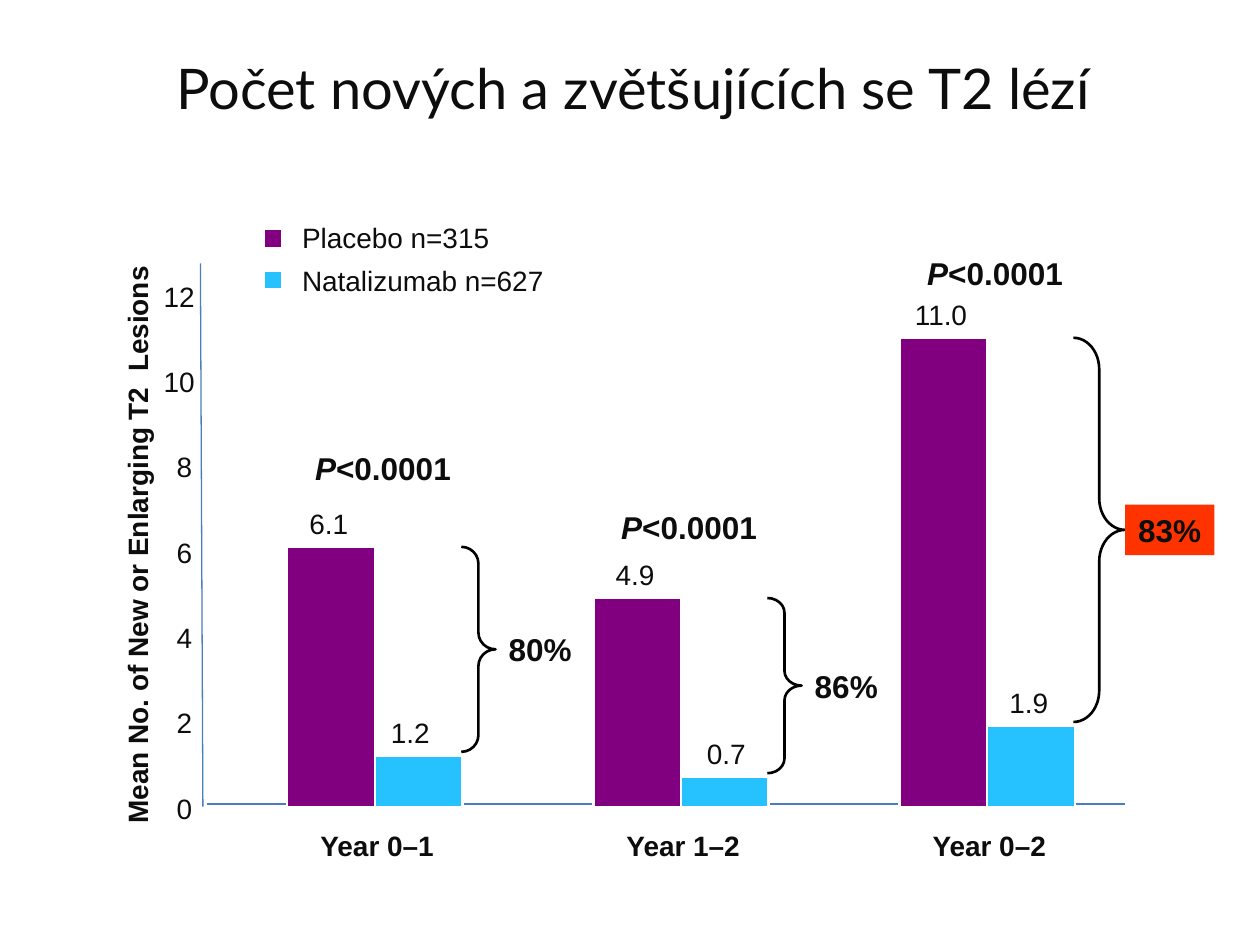
import pptx
import pptx.dml.color
import pptx.enum.shapes
import pptx.enum.text
import pptx.oxml.ns
import pptx.util
from lxml import etree

Cm = pptx.util.Cm
Pt = pptx.util.Pt
Align = pptx.enum.text.PP_ALIGN
Kind = pptx.enum.shapes.MSO_SHAPE

HUES = {"ink": "0D0D0D", "placebo": "800080", "drug": "26C2FF", "axis": "4B7EBC",
        "alert": "FF3300", "brace": "000000", "white": "FFFFFF"}

TITLE = "Počet nových a zvětšujících se T2 lézí"
SCALE = "Mean No. of New or Enlarging T2  Lesions"
TICKS = [0, 2, 4, 6, 8, 10, 12]
# name, hue, key top, label top
KEYS = [("Placebo n=315", "placebo", 4.62, 4.32),
        ("Natalizumab n=627", "drug", 5.46, 5.18)]
# name, placebo, drug, drug label shift, drop, brace width, brace curve, P top, drop fill
GROUPS = [
    ("Year 0–1", 6.1, 1.2, -0.33, "80%", 0.69, 0.49, 8.92, None),
    ("Year 1–2", 4.9, 0.7, -0.13, "86%", 0.69, 0.43, 10.11, None),
    ("Year 0–2", 11.0, 1.9, -0.2, "83%", 1.04, 0.61, 5.0, "alert"),
]
PVALUE = ("P", "<0.0001")

BASE, UNIT = 16.27, 0.86      # zero line and height of one lesion
LEFT, STEP, BAR = 5.79, 6.17, 1.77

deck = pptx.Presentation()
deck.slide_width, deck.slide_height = Cm(25.4), Cm(19.05)
slide = deck.slides.add_slide(deck.slide_layouts[6])
shapes = slide.shapes


def tint(name):
    return pptx.dml.color.RGBColor.from_string(HUES[name])


def write(frame, text, size=16, bold=False, align=Align.CENTER, wrap=False, bare=False,
          font="Arial"):
    """Fill a text frame; bare means without margins."""
    frame.text = text
    frame.word_wrap = wrap
    frame.auto_size = pptx.enum.text.MSO_AUTO_SIZE.SHAPE_TO_FIT_TEXT
    if bare:
        frame.margin_left = frame.margin_right = 0
        frame.margin_top = frame.margin_bottom = 0
    para = frame.paragraphs[0]
    para.alignment = align
    style(para.runs[0], size, bold, font)
    return para


def style(run, size, bold, font="Arial"):
    run.font.size, run.font.bold, run.font.name = Pt(size), bold, font
    run.font.color.rgb = tint("ink")


def label(x, y, w, h, text, **look):
    box = shapes.add_textbox(Cm(x), Cm(y), Cm(w), Cm(h))
    write(box.text_frame, text, **look)
    return box


def form(kind, x, y, w, h, fill=None, line=None):
    item = shapes.add_shape(kind, Cm(x), Cm(y), Cm(w), Cm(h))
    item.shadow.inherit = False
    if fill:
        item.fill.solid()
        item.fill.fore_color.rgb = tint(fill)
    else:
        item.fill.background()
    if line:
        item.line.color.rgb = tint(line)
        item.line.width = Pt(1.5)
    else:
        item.line.fill.background()
    return item


def axis(x1, y1, x2, y2):
    line = shapes.add_connector(pptx.enum.shapes.MSO_CONNECTOR.STRAIGHT,
                                Cm(x1), Cm(y1), Cm(x2), Cm(y2))
    line.line.color.rgb = tint("axis")
    line.line.width = Pt(0.75)
    etree.SubElement(line._element.spPr, pptx.oxml.ns.qn("a:effectLst"))


def bar(x, value, hue, shift):
    """Draw one bar with its value and return its top."""
    top = BASE - value * UNIT
    form(Kind.RECTANGLE, x, top, BAR, value * UNIT, hue, "white")
    label(x + shift, top - 0.94, 2.08, 0.94, f"{value:.1f}", wrap=True)
    return top


def group(x, name, placebo, drug, shift, drop, wide, curve, ptop, fill):
    high = bar(x, placebo, "placebo", -0.2)
    low = bar(x + BAR, drug, "drug", shift) - 0.08

    brace = form(Kind.RIGHT_BRACE, x + 3.51, high, wide, low - high, line="brace")
    brace.adjustments[0] = curve
    tag = form(Kind.RECTANGLE, x + 3.51 + wide, (high + low) / 2 - 0.51, 1.8, 1.02, fill)
    write(tag.text_frame, drop, size=18, bold=True)

    note = label(x + 0.28, ptop, 3.3, 1.02, PVALUE[0], size=18, bold=True)
    para = note.text_frame.paragraphs[0]
    para.runs[0].font.italic = True
    rest = para.add_run()
    rest.text = PVALUE[1]
    style(rest, 18, True)

    label(x + 0.67, 16.71, 2.36, 0.69, name, bold=True, align=Align.LEFT, bare=True)


title = label(1.02, 0.23, 23.5, 3.07, TITLE, size=32, wrap=True, font="Lato")
title.text_frame.auto_size = pptx.enum.text.MSO_AUTO_SIZE.NONE
title.text_frame.vertical_anchor = pptx.enum.text.MSO_ANCHOR.MIDDLE

label(-2.92, 10.64, 11.38, 0.69, SCALE, bold=True, bare=True).rotation = 270
for tick in TICKS:
    x, wide = (3.56, 0.31) if tick < 10 else (3.3, 0.63)
    label(x, 15.95 - tick * UNIT, wide, 0.69, str(tick), align=Align.LEFT, bare=True)

axis(4.17, 16.21, 22.68, 16.21)
for i, data in enumerate(GROUPS):
    group(LEFT + i * STEP, *data)
axis(4.04, 5.31, 4.09, 16.26)

for name, hue, top, text_top in KEYS:
    form(Kind.RECTANGLE, 5.31, top, 0.38, 0.38, hue, "white")
    label(5.84, text_top, 8.59, 0.94, name, align=Align.LEFT, wrap=True)

deck.save("out.pptx")
